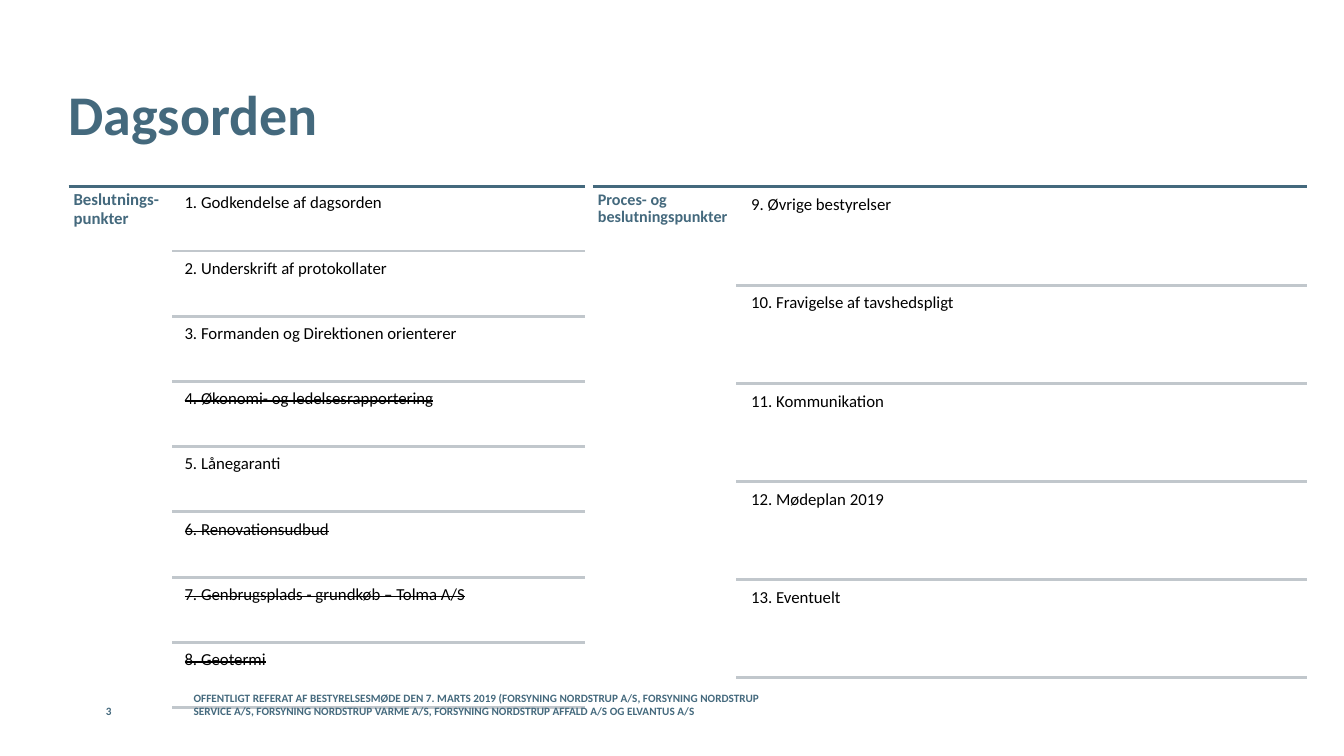
from lxml.etree import SubElement
from pptx import Presentation
from pptx.dml.color import RGBColor
from pptx.enum.shapes import MSO_CONNECTOR as Connector
from pptx.enum.text import MSO_ANCHOR as Anchor
from pptx.oxml.ns import qn
from pptx.util import Inches, Pt

COLORS = {"petrol": "44697D", "divider": "C1C7CC", "ink": "000000"}


def write_text(frame, text, *, size=12, color="ink", bold=False, strike=False,
               spacing=None, anchor=Anchor.TOP, inset=0.05, font="Calibri"):
    frame.word_wrap = True
    frame.vertical_anchor = anchor
    frame.margin_left = frame.margin_right = Inches(inset)
    frame.margin_top = frame.margin_bottom = Inches(inset)
    paragraph = frame.paragraphs[0]
    if spacing:
        paragraph.line_spacing = spacing
    run = paragraph.add_run()
    run.text = text
    run.font.name = font
    run.font.size = Pt(size)
    run.font.bold = bold
    run.font.color.rgb = RGBColor.from_string(COLORS[color])
    if strike:
        run.font._element.set("strike", "sngStrike")


class AgendaSlide:
    rule_width = 2
    item_spacing = 0.9

    def __init__(self, deck):
        self.slide = deck.slides.add_slide(deck.slide_layouts[6])

    def text(self, box, content, parent=None, **style):
        shapes = (parent or self.slide).shapes
        label = shapes.add_textbox(*(Inches(side) for side in box))
        write_text(label.text_frame, content, **style)

    def rule(self, parent, left, right, y, color):
        line = parent.shapes.add_connector(
            Connector.STRAIGHT, Inches(left), Inches(y), Inches(right), Inches(y))
        line.line.color.rgb = RGBColor.from_string(COLORS[color])
        line.line.width = Pt(self.rule_width)
        SubElement(line._element.spPr, qn("a:effectLst"))

    def section(self, heading, items, *, left, right, heading_width, heading_size,
                rule_left, item_left, item_top, item_height, first_rule, last_rule):
        group = self.slide.shapes.add_group_shape()
        top = 1.85
        self.rule(group, left, right, top, "petrol")
        self.text((left, top, heading_width, last_rule - top), heading, group,
                  size=heading_size, color="petrol", bold=True,
                  spacing=self.item_spacing)
        pitch = (last_rule - first_rule) / (len(items) - 1)
        for index, (item, dropped) in enumerate(items):
            offset = index * pitch
            self.text((item_left, item_top + offset, right - item_left, item_height),
                      item, group, strike=dropped, spacing=self.item_spacing)
            self.rule(group, rule_left, right, first_rule + offset, "divider")


def main():
    deck = Presentation()
    deck.slide_width, deck.slide_height = Inches(13.33), Inches(7.5)
    agenda = AgendaSlide(deck)

    agenda.text((0.68, 0.4, 11.5, 1.45), "Dagsorden", size=40, color="petrol",
                bold=True, anchor=Anchor.MIDDLE, inset=0)

    decisions = [
        ("1. Godkendelse af dagsorden", False),
        ("2. Underskrift af protokollater", False),
        ("3. Formanden og Direktionen orienterer", False),
        ("4. Økonomi- og ledelsesrapportering", True),
        ("5. Lånegaranti", False),
        ("6. Renovationsudbud", True),
        ("7. Genbrugsplads - grundkøb – Tolma A/S", True),
        ("8. Geotermi", True),
    ]
    agenda.section("Beslutnings-punkter", decisions, left=0.68, right=5.8,
                   heading_width=1.02, heading_size=12, rule_left=1.71,
                   item_left=1.78, item_top=1.88, item_height=0.62,
                   first_rule=2.49, last_rule=7.02)

    processes = [
        ("9. Øvrige bestyrelser", False),
        ("10. Fravigelse af tavshedspligt", False),
        ("11. Kommunikation", False),
        ("12. Mødeplan 2019", False),
        ("13. Eventuelt", False),
    ]
    agenda.section("Proces- og beslutningspunkter", processes, left=5.88, right=12.96,
                   heading_width=1.42, heading_size=11.5, rule_left=7.3,
                   item_left=7.4, item_top=1.9, item_height=0.93,
                   first_rule=2.83, last_rule=6.72)

    meeting = ("OFFENTLIGT REFERAT AF BESTYRELSESMØDE DEN 7. MARTS 2019 "
               "(FORSYNING NORDSTRUP A/S, FORSYNING NORDSTRUP SERVICE A/S, "
               "FORSYNING NORDSTRUP VARME A/S, FORSYNING NORDSTRUP AFFALD A/S "
               "OG ELVANTUS A/S")
    for left, width, content in ((1.92, 5.67, meeting), (1.05, 0.68, "3")):
        agenda.text((left, 6.93, width, 0.19), content, size=8, color="petrol",
                    bold=True, anchor=Anchor.BOTTOM, inset=0)

    deck.save("out.pptx")


if __name__ == "__main__":
    main()
